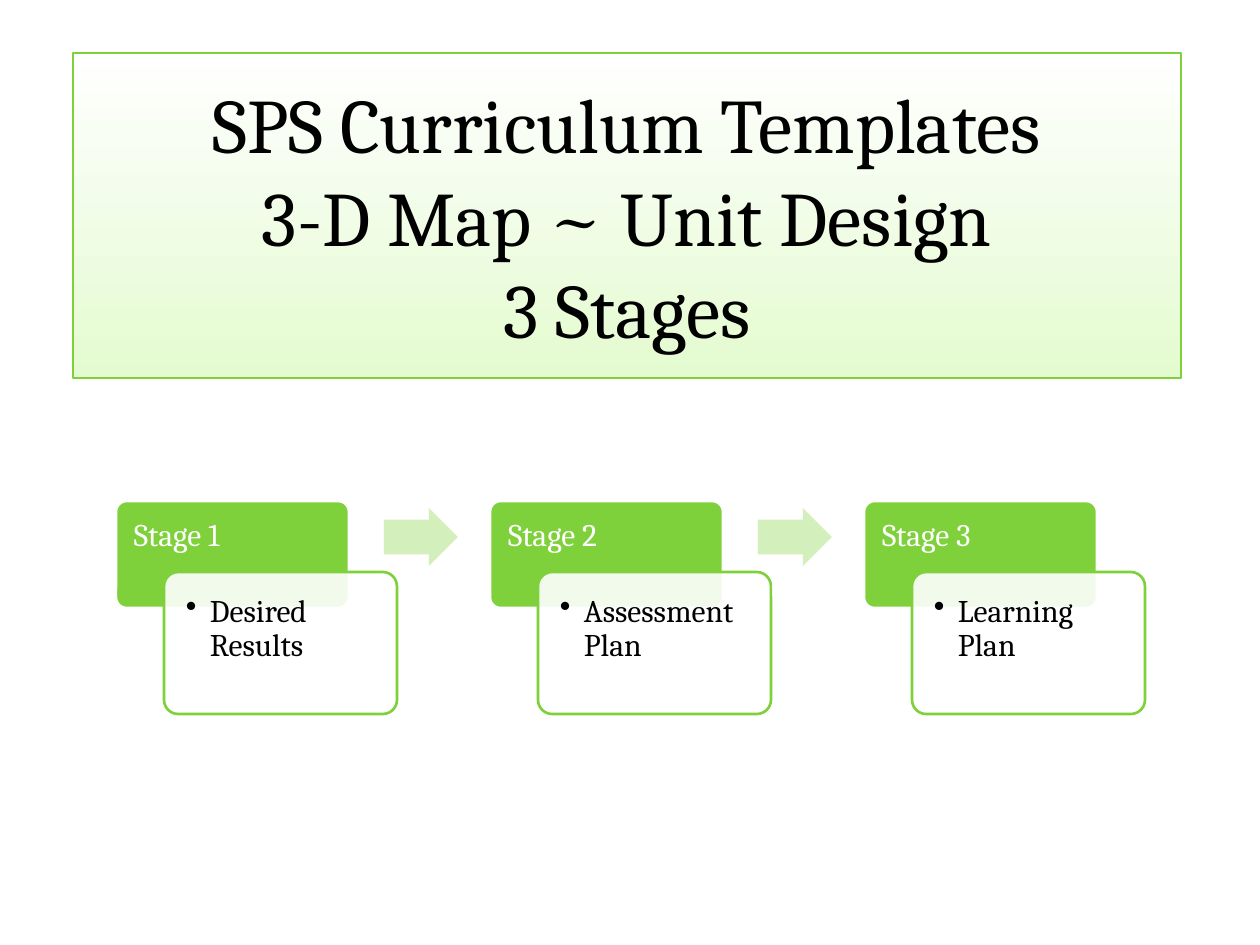
from lxml.etree import SubElement
from pptx import Presentation
from pptx.dml.color import RGBColor
from pptx.enum.shapes import MSO_SHAPE
from pptx.enum.text import MSO_ANCHOR, PP_ALIGN
from pptx.oxml.ns import qn
from pptx.util import Emu, Pt

# Content
TITLE = ["SPS Curriculum Templates", "3-D Map ~ Unit Design", "3 Stages"]
STAGES = [
    ("Stage 1", "Desired Results"),
    ("Stage 2", "Assessment Plan"),
    ("Stage 3", "Learning Plan"),
]


class Theme:
    font = "Cambria"
    title, body = 44, 18
    green, pale, wash = "7FD13B", "D3EFBB", "E4FBD0"
    white, black = "FFFFFF", "000000"


# Layout in px, 126 to the inch
LEFT, TOP, PITCH = 116, 501, 374
PAD = 18


def px(n):
    return Emu(round(n * 914400 / 126))


def rgb(code):
    return RGBColor.from_string(code)


def shape(kind, box, fill=None, line=None, width=1.5, adjust=()):
    item = slide.shapes.add_shape(kind, *map(px, box))
    item.shadow.inherit = False
    for i, value in enumerate(adjust):
        item.adjustments[i] = value
    if fill:
        item.fill.solid()
        item.fill.fore_color.rgb = rgb(fill)
    if line:
        item.line.color.rgb = rgb(line)
        item.line.width = Pt(width)
    else:
        item.line.fill.background()
    return item


def style(para, size, color):
    for run in para.runs:
        run.font.name = Theme.font
        run.font.size = Pt(size)
        run.font.color.rgb = rgb(color)


def label(box, text, color, foot, after):
    frame = slide.shapes.add_textbox(*map(px, box)).text_frame
    frame.word_wrap = True
    frame.margin_left = frame.margin_right = frame.margin_top = px(PAD)
    frame.margin_bottom = px(foot)
    para = frame.paragraphs[0]
    para.text = text
    para.line_spacing = 0.9
    para.space_after = Pt(after)
    style(para, Theme.body, color)
    return para


def bullet(para):
    para.level = 1
    props = para._p.get_or_add_pPr()
    props.set("marL", str(px(24)))
    props.set("indent", str(-px(24)))
    tint = SubElement(props, qn("a:buClr"))
    SubElement(tint, qn("a:srgbClr"), val=Theme.black)
    SubElement(props, qn("a:buChar"), char="•")


def fade(item, percent):
    color = item.fill._xPr.find(qn("a:solidFill"))[0]
    SubElement(color, qn("a:alpha"), val=str(percent * 1000))


deck = Presentation()
deck.slide_width, deck.slide_height = px(1260), px(945)
slide = deck.slides.add_slide(deck.slide_layouts[6])

# Stages, with an arrow between neighbours
for i, (name, goal) in enumerate(STAGES):
    x = LEFT + i * PITCH
    shape(MSO_SHAPE.ROUNDED_RECTANGLE, (x, TOP, 233, 107),
          Theme.green, Theme.white, adjust=[0.1])
    label((x, TOP, 233, 72), name, Theme.white, PAD // 2, 6.3)
    card = shape(MSO_SHAPE.ROUNDED_RECTANGLE, (x + 48, TOP + 71, 233, 142),
                 Theme.white, Theme.green, adjust=[0.1])
    fade(card, 90)
    bullet(label((x + 52, TOP + 76, 224, 135), goal, Theme.black, PAD, 2.7))
    if i < len(STAGES) - 1:
        shape(MSO_SHAPE.RIGHT_ARROW, (x + 268, TOP + 7, 74, 58),
              Theme.pale, adjust=[0.6, 0.5])

# Title panel
panel = shape(MSO_SHAPE.RECTANGLE, (73, 53, 1108, 325),
              line=Theme.green, width=0.75)
panel.fill.gradient()
panel.fill.gradient_angle = 270
for stop, place, color in zip(panel.fill.gradient_stops, (0, 1),
                              (Theme.white, Theme.wash)):
    stop.position = place
    stop.color.rgb = rgb(color)
frame = panel.text_frame
frame.word_wrap = True
frame.vertical_anchor = MSO_ANCHOR.MIDDLE
head = frame.paragraphs[0]
head.text = "\v".join(TITLE)
head.alignment = PP_ALIGN.CENTER
style(head, Theme.title, Theme.black)

deck.save("out.pptx")
